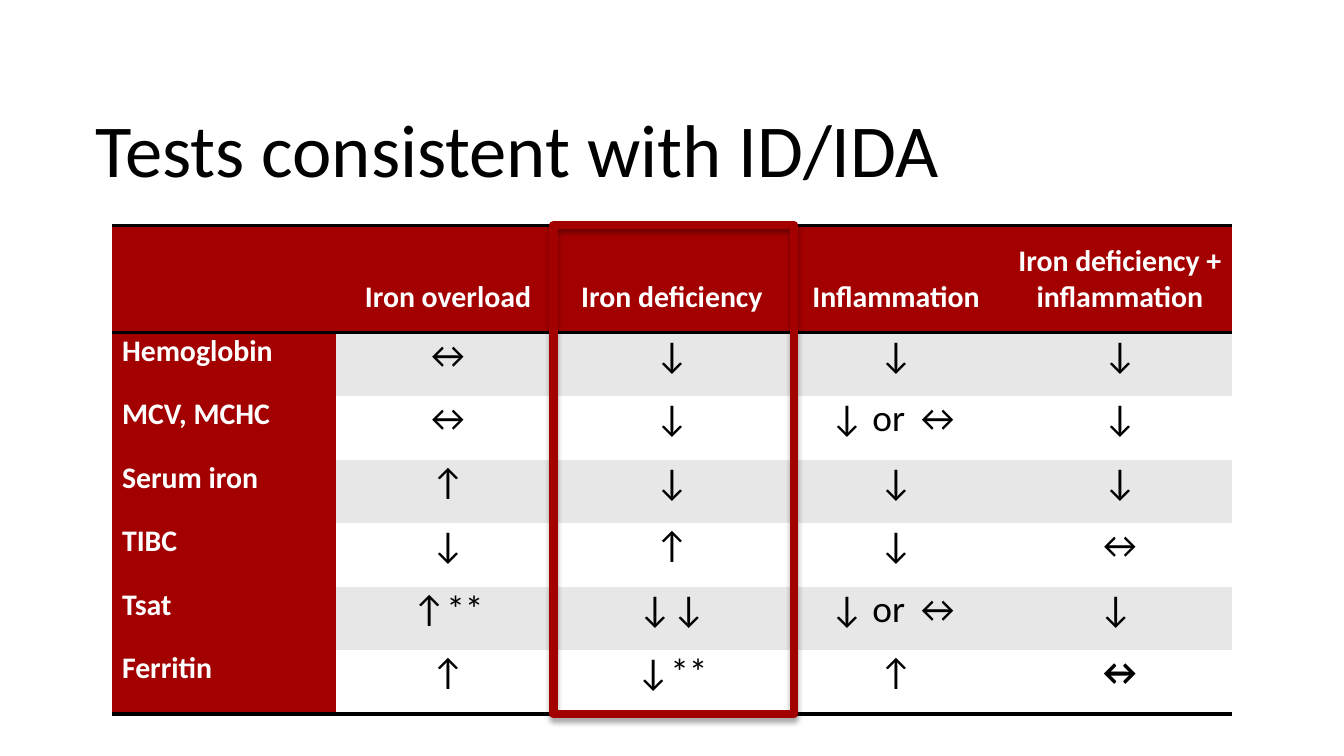
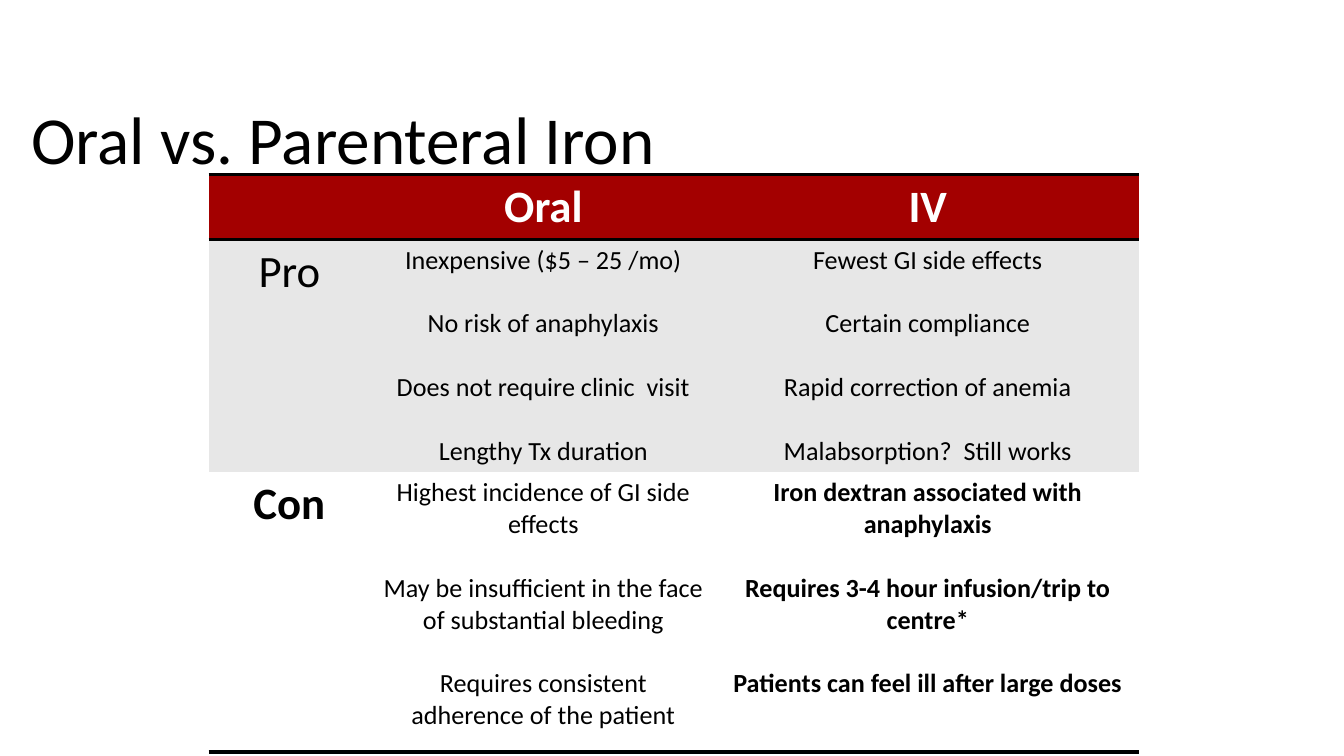
import pptx
import pptx.dml.color
import pptx.enum.shapes
import pptx.enum.text
import pptx.oxml
import pptx.oxml.ns
import pptx.util

Pt = pptx.util.Pt
ALIGN = pptx.enum.text.PP_ALIGN
ANCHOR = pptx.enum.text.MSO_ANCHOR

FONT = "Calibri"
RED, GREY, WHITE, BLACK = "A30000", "E7E7E7", "FFFFFF", "000000"
NS = pptx.oxml.ns.nsdecls("a")
PLAIN_TABLE = "{2D5ABB26-0587-4C30-8999-92F81FD0307C}"
RULE_WIDTH = 2

TEST_HEADINGS = ["", "Iron overload", "Iron deficiency", "Inflammation",
                 "Iron deficiency + inflammation"]
TEST_RESULTS = [
    ["Hemoglobin", "↔", "↓", "↓", "↓"],
    ["MCV, MCHC", "↔", "↓", "↓ or ↔", "↓"],
    ["Serum iron", "↑", "↓", "↓", "↓"],
    ["TIBC", "↓", "↑", "↓", "↔"],
    ["Tsat", "↑**", "↓↓", "↓ or ↔", "↓ "],
    ["Ferritin", "↑", "↓**", "↑", "↔"],
]

ROUTE_HEADINGS = ["", "Oral", "IV"]
ROUTE_POINTS = [
    ["Pro",
     ["Inexpensive ($5 – 25 /mo)", "No risk of anaphylaxis",
      "Does not require clinic  visit", "Lengthy Tx duration"],
     ["Fewest GI side effects", "Certain compliance",
      "Rapid correction of anemia", "Malabsorption?  Still works"]],
    ["Con",
     ["Highest incidence of GI side effects",
      "May be insufficient in the face of substantial bleeding",
      "Requires consistent adherence of the patient"],
     ["Iron dextran associated with anaphylaxis",
      "Requires 3-4 hour infusion/trip to centre*",
      "Patients can feel ill after large doses"]],
]


def rgb(value):
    """Turn a hex string into a colour."""
    return pptx.dml.color.RGBColor.from_string(value)


def format_text(frame, size, color, bold=False, align=ALIGN.CENTER, gap=0):
    """Format every paragraph of a text frame, with a gap between paragraphs."""
    for index, paragraph in enumerate(frame.paragraphs):
        paragraph.alignment = align
        if gap and index:
            paragraph.space_before = Pt(gap)
        for run in paragraph.runs:
            run.font.name = FONT
            run.font.size = Pt(size)
            run.font.bold = bold
            run.font.color.rgb = rgb(color)


def add_titled_slide(deck, title, box, size):
    """Add a title-only slide and place its title in the box."""
    slide = deck.slides.add_slide(deck.slide_layouts[5])
    heading = slide.shapes.title
    heading.left, heading.top, heading.width, heading.height = map(Pt, box)
    frame = heading.text_frame
    frame.text = title
    frame.word_wrap = True
    frame.auto_size = pptx.enum.text.MSO_AUTO_SIZE.NONE
    frame.vertical_anchor = ANCHOR.MIDDLE
    format_text(frame, size, BLACK, align=ALIGN.LEFT)
    return slide


def add_plain_table(slide, left, top, widths, heights):
    """Add an unstyled table with the given column widths and row heights."""
    table = slide.shapes.add_table(
        len(heights), len(widths), Pt(left), Pt(top),
        Pt(sum(widths)), Pt(sum(heights))).table
    table.horz_banding = False
    table._tbl.tblPr.find(pptx.oxml.ns.qn("a:tableStyleId")).text = PLAIN_TABLE
    for column, width in zip(table.columns, widths):
        column.width = Pt(width)
    for row, height in zip(table.rows, heights):
        row.height = Pt(height)
    return table


def fill_cell(cell, text, fill, margins, rules=()):
    """Give a cell its text, margins, horizontal rules and fill."""
    cell.text_frame.text = text
    side, edge = margins
    cell.margin_left = cell.margin_right = Pt(side)
    cell.margin_top = cell.margin_bottom = Pt(edge)
    for rule in rules:
        cell._tc.get_or_add_tcPr().append(pptx.oxml.parse_xml(
            f'<a:{rule} {NS} w="{Pt(RULE_WIDTH)}"><a:solidFill>'
            f'<a:srgbClr val="{BLACK}"/></a:solidFill></a:{rule}>'))
    cell.fill.solid()
    cell.fill.fore_color.rgb = rgb(fill)


def add_header(table, headings, size, margins):
    """Fill the red header row, ruled above and below."""
    for column, heading in enumerate(headings):
        cell = table.cell(0, column)
        fill_cell(cell, heading, RED, margins, ["lnT", "lnB"])
        format_text(cell.text_frame, size, WHITE, bold=True)


def body_style(row, last):
    """Return the band colour and the rules of a body row."""
    return (GREY if row % 2 else WHITE), (["lnB"] if row == last else [])


def add_test_table(slide, box):
    """Fill the box with the table of iron tests."""
    left, top, width, height = box
    header_height = 57.6
    count, last = len(TEST_HEADINGS), len(TEST_RESULTS)
    row_height = (height - header_height) / last
    margins = (5.4, 0)
    table = add_plain_table(slide, left, top, [width / count] * count,
                            [header_height] + [row_height] * last)
    add_header(table, TEST_HEADINGS, 16, margins)
    for column in range(count):
        heading = table.cell(0, column)
        heading.vertical_anchor = ANCHOR.BOTTOM
        heading.margin_bottom = Pt(9)
    for row, results in enumerate(TEST_RESULTS, 1):
        band, rules = body_style(row, last)
        for column, result in enumerate(results):
            cell = table.cell(row, column)
            fill_cell(cell, result, band if column else RED, margins, rules)
            if column:
                corner = row == last and column == count - 1
                format_text(cell.text_frame, 20, BLACK, bold=corner)
            else:
                format_text(cell.text_frame, 16, WHITE, True, ALIGN.JUSTIFY)


def add_column_highlight(slide, box, column):
    """Frame one column of the test table in the box."""
    left, top, width, height = box
    column_width = width / len(TEST_HEADINGS)
    left_overhang, right_overhang = 3.4, 5.4
    frame = slide.shapes.add_shape(
        pptx.enum.shapes.MSO_SHAPE.RECTANGLE,
        Pt(left + column * column_width - left_overhang), Pt(top),
        Pt(column_width + left_overhang + right_overhang), Pt(height))
    frame.fill.background()
    frame.line.color.rgb = rgb(RED)
    frame.line.width = Pt(4.5)
    frame.shadow.inherit = False
    effects = frame._element.spPr.find(pptx.oxml.ns.qn("a:effectLst"))
    effects.append(pptx.oxml.parse_xml(
        f'<a:outerShdw {NS} blurRad="{Pt(3.1)}" dist="{Pt(1.8)}" dir="5400000" '
        f'rotWithShape="0"><a:srgbClr val="{BLACK}"><a:alpha val="35000"/>'
        '</a:srgbClr></a:outerShdw>'))


def add_route_table(slide, left, top):
    """Place the table of pros and cons at the given corner."""
    margins = (7.2, 2.7)
    last = len(ROUTE_POINTS)
    table = add_plain_table(slide, left, top, [86.4, 185.8, 226.1],
                            [34.7, 124.4, 150])
    add_header(table, ROUTE_HEADINGS, 24, margins)
    for row, (label, *routes) in enumerate(ROUTE_POINTS, 1):
        band, rules = body_style(row, last)
        side = table.cell(row, 0)
        fill_cell(side, label, band, margins, rules)
        format_text(side.text_frame, 24, BLACK, bold=row == last)
        for column, points in enumerate(routes, 1):
            cell = table.cell(row, column)
            fill_cell(cell, "\n".join(points), band, margins, rules)
            strong = row == last and column == len(routes)
            format_text(cell.text_frame, 14, BLACK, bold=strong, gap=17)


def build_tests_slide(deck):
    """Build the slide on tests, with iron deficiency highlighted."""
    slide = add_titled_slide(deck, "Tests consistent with ID/IDA",
                             (44, 45, 648, 67.7), 40)
    box = (60, 120.6, 600, 262)
    add_test_table(slide, box)
    add_column_highlight(slide, box, TEST_HEADINGS.index("Iron deficiency"))


def build_routes_slide(deck):
    """Build the slide comparing oral and parenteral iron."""
    slide = add_titled_slide(deck, "Oral vs. Parenteral Iron",
                             (9.4, 57, 702.7, 33.8), 36)
    add_route_table(slide, 111.8, 93.6)


def main():
    """Build and save the deck."""
    deck = pptx.Presentation()
    deck.slide_width, deck.slide_height = Pt(720), Pt(405)
    build_tests_slide(deck)
    build_routes_slide(deck)
    deck.save("out.pptx")


if __name__ == "__main__":
    main()
